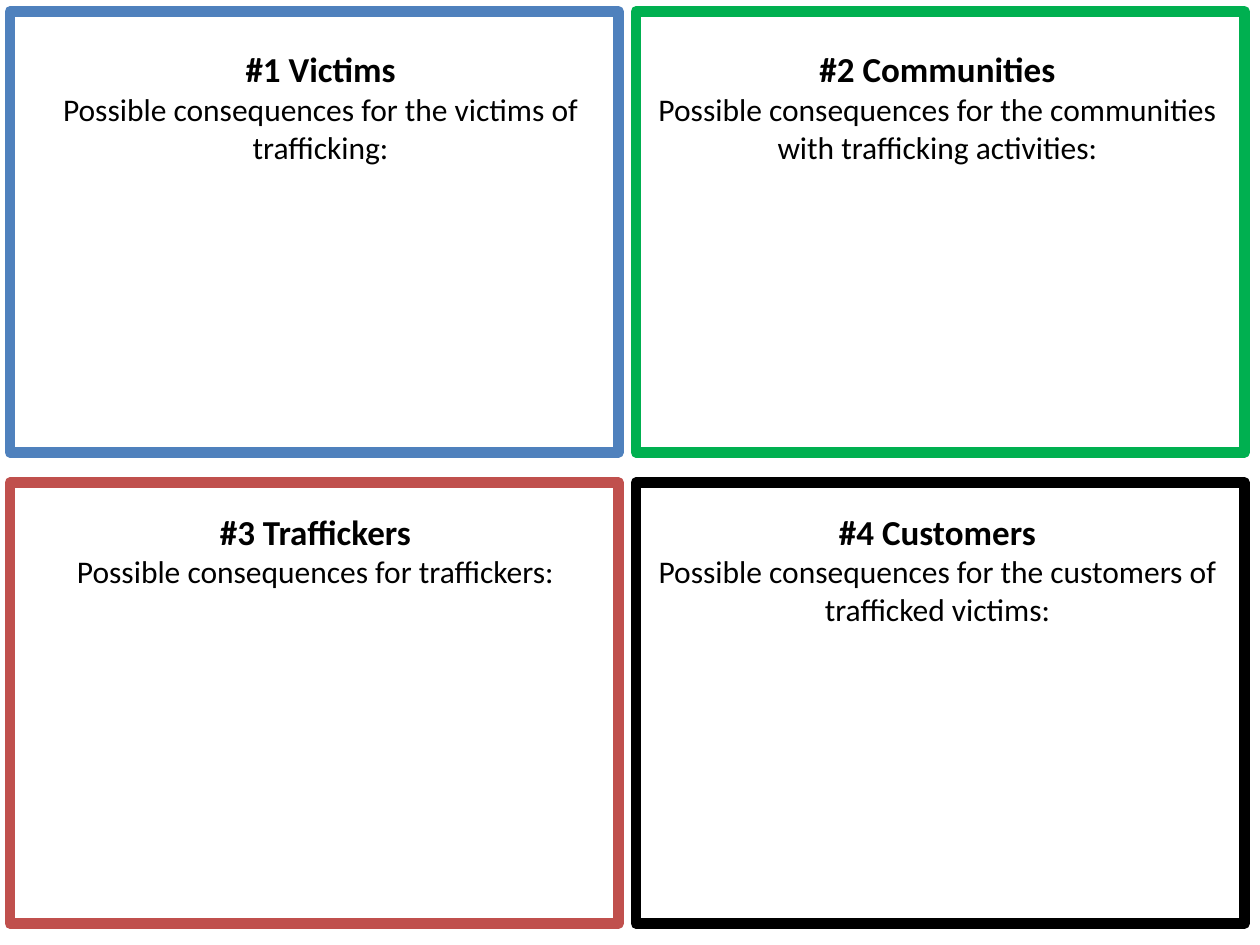
from pptx import Presentation
from pptx.dml.color import RGBColor
from pptx.enum.shapes import MSO_SHAPE
from pptx.enum.text import MSO_AUTO_SIZE, PP_ALIGN
from pptx.util import Cm, Pt

BLUE = RGBColor(0x4F, 0x81, 0xBD)
GREEN = RGBColor(0x00, 0xB0, 0x50)
RED = RGBColor(0xC0, 0x50, 0x4D)
BLACK = RGBColor(0x00, 0x00, 0x00)
WHITE = RGBColor(0xFF, 0xFF, 0xFF)

# Two-by-two grid of panels, in cm
GRID_LEFT, GRID_TOP = 0.2, 0.23
STEP_X, STEP_Y = 12.62, 9.5
PANEL_WIDTH, PANEL_HEIGHT = 12.27, 8.89
PROMPT_LEFTS = (0.43, 12.83)
PROMPT_TOPS = (0.84, 10.16)

HEADING_FORMAT = {"name": "Calibri", "size": Pt(20), "bold": True}
QUESTION_FORMAT = {"name": "Calibri", "size": Pt(18), "bold": False}

# Frame colour, heading, question, prompt width and height in cm
PANELS = [
    (BLUE, "#1 Victims",
     "Possible consequences for the victims of trafficking:", 12.07, 2.64),
    (GREEN, "#2 Communities",
     "Possible consequences for the communities with trafficking activities:",
     12.14, 4.19),
    (RED, "#3 Traffickers",
     "Possible consequences for traffickers:", 11.86, 1.88),
    (BLACK, "#4 Customers",
     "Possible consequences for the customers of trafficked victims:",
     12.14, 2.64),
]


def add_frame(slide, row, column, color):
    frame = slide.shapes.add_shape(
        MSO_SHAPE.RECTANGLE,
        Cm(GRID_LEFT + column * STEP_X), Cm(GRID_TOP + row * STEP_Y),
        Cm(PANEL_WIDTH), Cm(PANEL_HEIGHT))
    frame.shadow.inherit = False
    frame.fill.solid()
    frame.fill.fore_color.rgb = WHITE
    frame.line.color.rgb = color
    frame.line.width = Pt(6)


def write_line(paragraph, text, font_format):
    paragraph.alignment = PP_ALIGN.CENTER
    run = paragraph.add_run()
    run.text = text
    for attribute, value in font_format.items():
        setattr(run.font, attribute, value)
    run.font.color.rgb = BLACK


def add_prompt(slide, row, column, heading, question, width, height):
    prompt = slide.shapes.add_textbox(
        Cm(PROMPT_LEFTS[column]), Cm(PROMPT_TOPS[row]), Cm(width), Cm(height))
    content = prompt.text_frame
    content.word_wrap = True
    content.auto_size = MSO_AUTO_SIZE.SHAPE_TO_FIT_TEXT
    write_line(content.paragraphs[0], heading, HEADING_FORMAT)
    write_line(content.add_paragraph(), question, QUESTION_FORMAT)


def main():
    presentation = Presentation()
    presentation.slide_width = Cm(25.4)
    presentation.slide_height = Cm(19.05)
    slide = presentation.slides.add_slide(presentation.slide_layouts[6])

    # Coloured frames lie behind all prompts
    for index, (color, *_) in enumerate(PANELS):
        add_frame(slide, *divmod(index, 2), color)

    # Heading and question for each group
    for index, (_, *prompt) in enumerate(PANELS):
        add_prompt(slide, *divmod(index, 2), *prompt)

    presentation.save("out.pptx")


if __name__ == "__main__":
    main()
